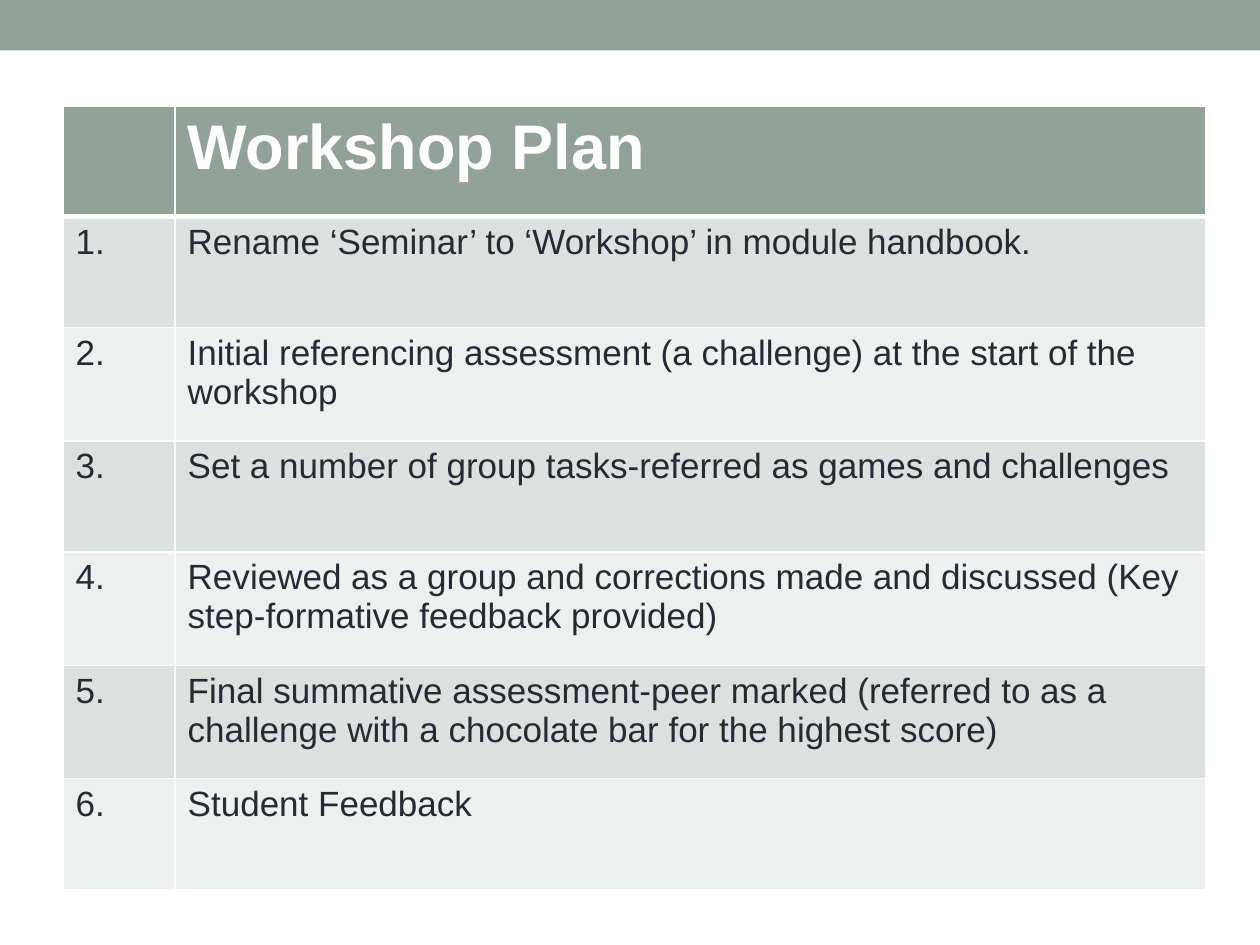
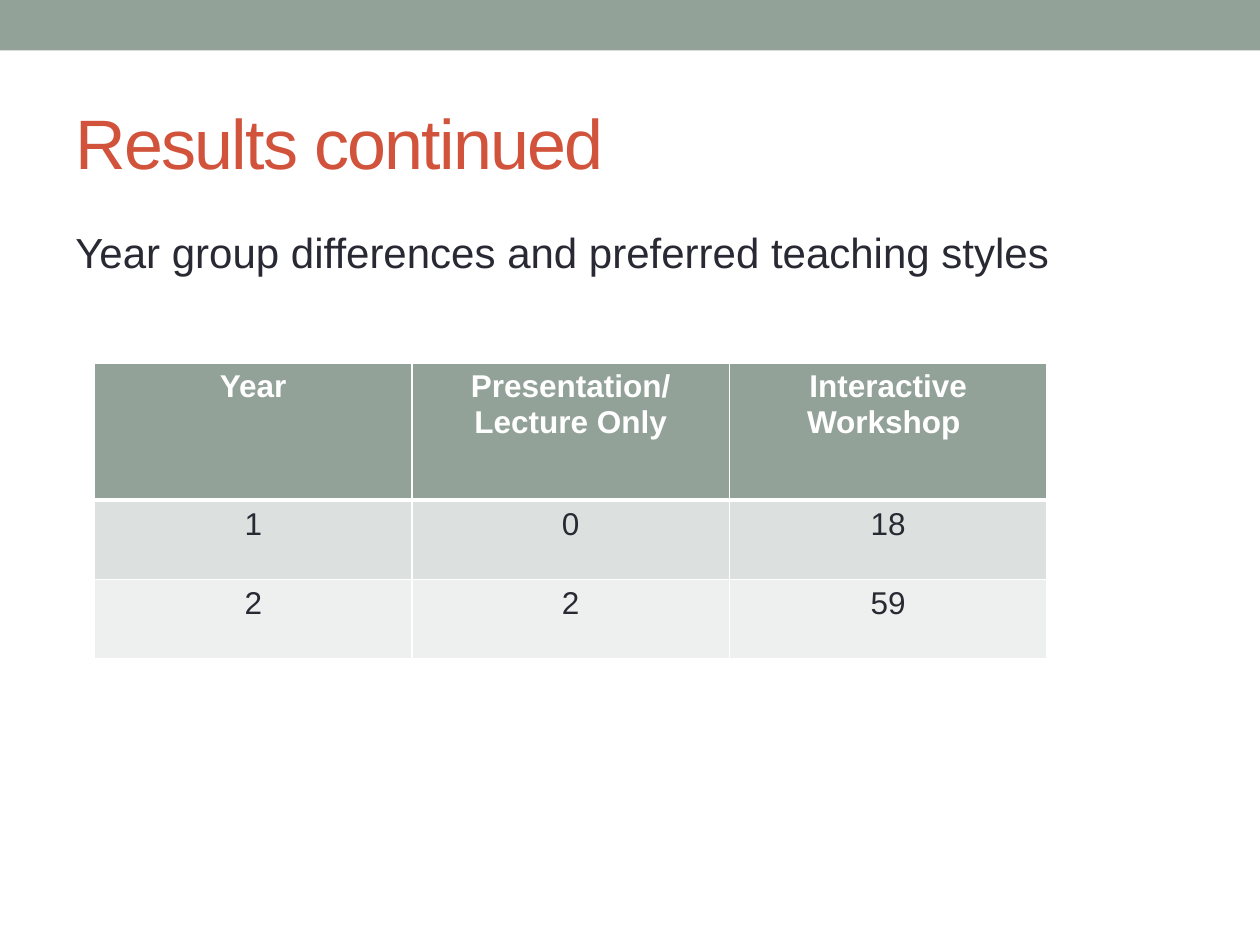
from dataclasses import dataclass

from lxml import etree
from pptx import Presentation
from pptx.dml.color import RGBColor
from pptx.enum.shapes import MSO_SHAPE
from pptx.enum.text import MSO_ANCHOR, PP_ALIGN
from pptx.oxml.ns import qn
from pptx.slide import Slide
from pptx.table import _Cell
from pptx.text.text import _Paragraph, _Run
from pptx.util import Emu, Pt

RECTANGLE = MSO_SHAPE.RECTANGLE
TOP, MIDDLE = MSO_ANCHOR.TOP, MSO_ANCHOR.MIDDLE
LEFT, CENTER = PP_ALIGN.LEFT, PP_ALIGN.CENTER
EMU_PER_PX = 9144  # 100 px to the inch
BLANK_LAYOUT = 6
PAGE_WIDTH, PAGE_HEIGHT = 1000, 750
BAND_HEIGHT = 40


@dataclass(frozen=True)
class Theme:
    font: str = "Arial"
    sage: str = "93A299"
    dark_row: str = "DCE0DE"
    light_row: str = "EEF0EF"
    white: str = "FFFFFF"
    ink: str = "292934"
    title_color: str = "D2533C"
    title_size: int = 40
    body_size: int = 24
    title_tracking: int = -100  # hundredths of a point
    rule: int = 1
    header_rule: int = 3


THEME = Theme()


@dataclass(frozen=True)
class Box:
    left: int
    top: int
    width: int
    height: int


@dataclass(frozen=True)
class TextStyle:
    size: int
    color: str
    bold: bool = False


@dataclass(frozen=True)
class TableSpec:
    left: int
    top: int
    columns: list[int]
    row_heights: list[int]
    rows: list[list[str]]
    header_size: int
    body_size: int
    align: PP_ALIGN


WORKSHOP_STEPS = [
    "Rename ‘Seminar’ to ‘Workshop’ in module handbook.",
    "Initial referencing assessment (a challenge) at the start of the workshop",
    "Set a number of group tasks-referred as games and challenges",
    "Reviewed as a group and corrections made and discussed "
    "(Key step-formative feedback provided)",
    "Final summative assessment-peer marked (referred to as a challenge "
    "with a chocolate bar for the highest score)",
    "Student Feedback",
]
WORKSHOP_PLAN = TableSpec(
    left=50, top=84, columns=[89, 818],
    row_heights=[88, 88, 90, 88, 90, 90, 88],
    rows=[["", "Workshop Plan"]]
    + [[f"{number}.", step] for number, step in enumerate(WORKSHOP_STEPS, 1)],
    header_size=36, body_size=20, align=LEFT,
)
YEAR_RESULTS = TableSpec(
    left=75, top=288, columns=[252] * 3, row_heights=[109, 63, 63],
    rows=[
        ["Year", "Presentation/Lecture Only", "Interactive Workshop "],
        ["1", "0", "18"],
        ["2", "2", "59"],
    ],
    header_size=18, body_size=18, align=CENTER,
)


def px(length: int) -> Emu:
    return Emu(length * EMU_PER_PX)


def place(box: Box) -> tuple[Emu, Emu, Emu, Emu]:
    return px(box.left), px(box.top), px(box.width), px(box.height)


def rgb(color: str) -> RGBColor:
    return RGBColor.from_string(color)


def add_span(para: _Paragraph, text: str, style: TextStyle) -> _Run:
    span = para.add_run()
    span.text = text
    span.font.name = THEME.font
    span.font.size = Pt(style.size)
    span.font.bold = style.bold
    span.font.color.rgb = rgb(style.color)
    return span


def add_page(deck: Presentation) -> Slide:
    """Add a blank page with the shared band along its top."""
    page = deck.slides.add_slide(deck.slide_layouts[BLANK_LAYOUT])
    band = page.shapes.add_shape(RECTANGLE, *place(Box(0, 0, PAGE_WIDTH, BAND_HEIGHT)))
    band.shadow.inherit = False
    band.fill.solid()
    band.fill.fore_color.rgb = rgb(THEME.sage)
    band.line.fill.background()
    return page


def add_text(page: Slide, box: Box, text: str, style: TextStyle,
             anchor: MSO_ANCHOR = TOP, space_before: float = 0) -> _Run:
    frame = page.shapes.add_textbox(*place(box)).text_frame
    frame.word_wrap = True
    frame.vertical_anchor = anchor
    para = frame.paragraphs[0]
    para.space_before = Pt(space_before)
    return add_span(para, text, style)


def set_borders(cell: _Cell, top: int, bottom: int) -> None:
    """Draw white cell borders; line elements must precede the fill."""
    properties = cell._tc.get_or_add_tcPr()
    widths = {"a:lnL": THEME.rule, "a:lnR": THEME.rule, "a:lnT": top, "a:lnB": bottom}
    for position, (tag, width) in enumerate(widths.items()):
        line = etree.Element(qn(tag), w=str(Pt(width)))
        fill = etree.SubElement(line, qn("a:solidFill"))
        etree.SubElement(fill, qn("a:srgbClr"), val=THEME.white)
        properties.insert(position, line)


def add_table(page: Slide, spec: TableSpec) -> None:
    box = Box(spec.left, spec.top, sum(spec.columns), sum(spec.row_heights))
    table = page.shapes.add_table(
        len(spec.rows), len(spec.columns), *place(box)).table
    table.horz_banding = False
    for column, width in zip(table.columns, spec.columns):
        column.width = px(width)
    for row, height in zip(table.rows, spec.row_heights):
        row.height = px(height)

    header_style = TextStyle(spec.header_size, THEME.white, bold=True)
    body_style = TextStyle(spec.body_size, THEME.ink)
    for row_index, texts in enumerate(spec.rows):
        is_header = row_index == 0
        band = THEME.dark_row if row_index % 2 else THEME.light_row
        for column_index, text in enumerate(texts):
            cell = table.cell(row_index, column_index)
            cell.fill.solid()
            cell.fill.fore_color.rgb = rgb(THEME.sage if is_header else band)
            set_borders(
                cell,
                top=THEME.header_rule if row_index == 1 else THEME.rule,
                bottom=THEME.header_rule if is_header else THEME.rule,
            )
            para = cell.text_frame.paragraphs[0]
            para.alignment = spec.align
            if text:
                add_span(para, text, header_style if is_header else body_style)


def add_workshop_page(deck: Presentation) -> None:
    add_table(add_page(deck), WORKSHOP_PLAN)


def add_results_page(deck: Presentation) -> None:
    page = add_page(deck)
    title = add_text(page, Box(50, 58, 900, 108), "Results continued",
                     TextStyle(THEME.title_size, THEME.title_color), MIDDLE)
    title.font._element.set("spc", str(THEME.title_tracking))
    add_text(page, Box(50, 175, 900, 533),
             "Year group differences and preferred teaching styles",
             TextStyle(THEME.body_size, THEME.ink),
             space_before=THEME.body_size * 0.2)
    add_table(page, YEAR_RESULTS)


def main() -> None:
    deck = Presentation()
    deck.slide_width, deck.slide_height = px(PAGE_WIDTH), px(PAGE_HEIGHT)
    add_workshop_page(deck)
    add_results_page(deck)
    deck.save("out.pptx")


if __name__ == "__main__":
    main()
